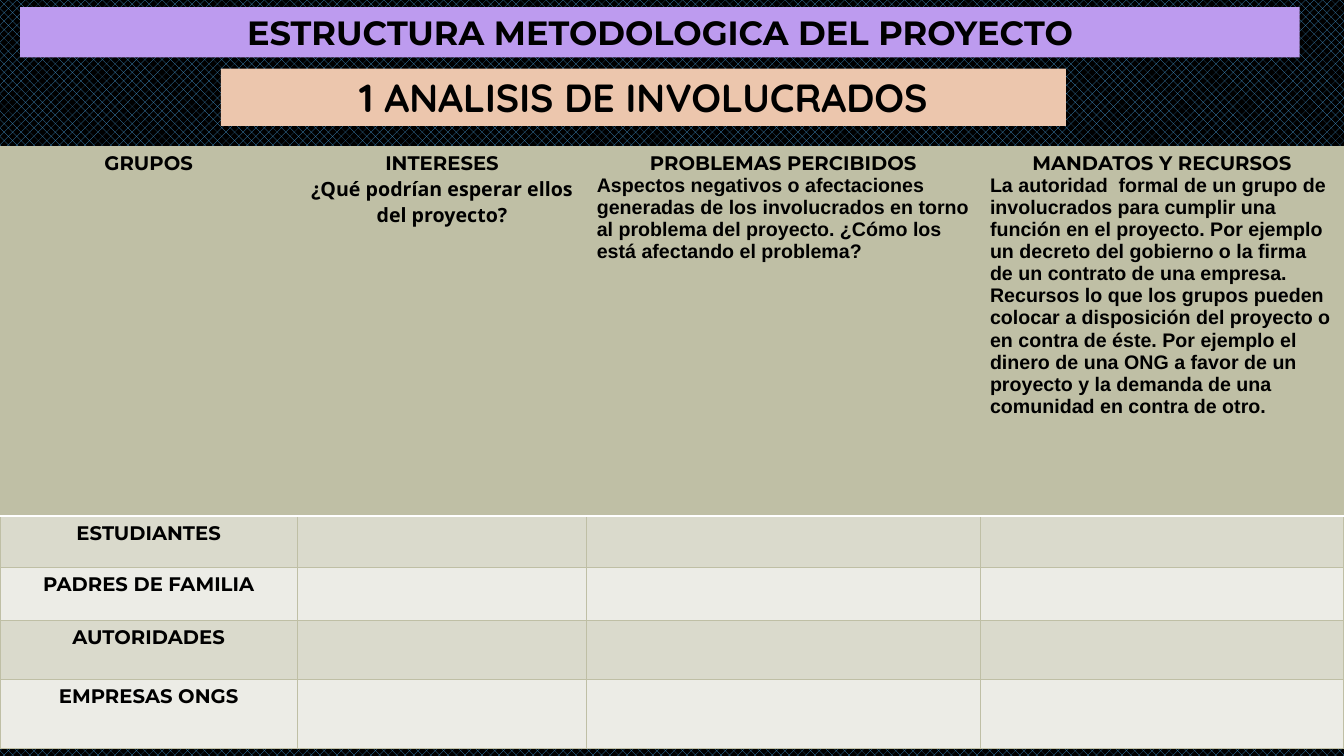
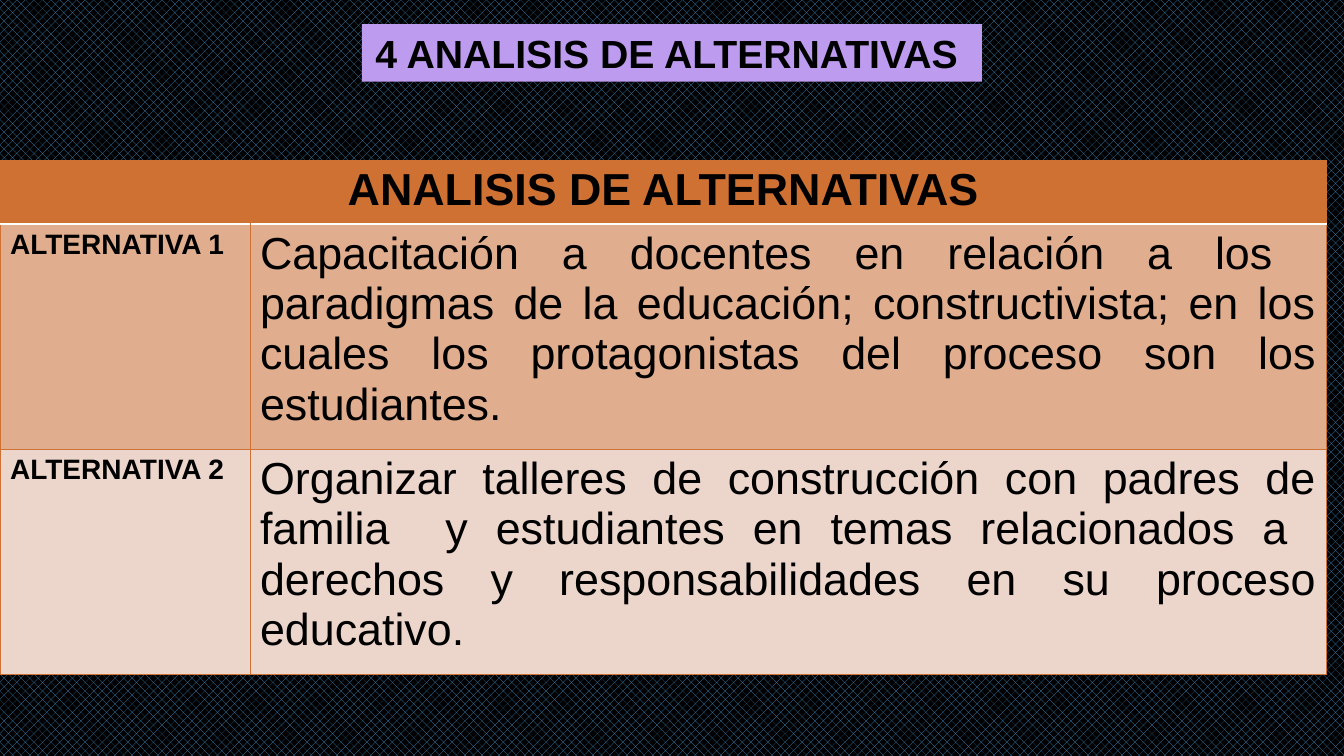
from dataclasses import dataclass

from lxml.etree import SubElement
from pptx import Presentation
from pptx.dml.color import RGBColor
from pptx.enum.dml import MSO_PATTERN
from pptx.enum.shapes import MSO_SHAPE
from pptx.enum.text import PP_ALIGN
from pptx.oxml.ns import qn
from pptx.util import Inches, Pt


@dataclass(frozen=True)
class Theme:
    ink: str = "000000"
    weave: str = "4597CF"
    rule: str = "FFFFFF"
    lilac: str = "BD9BEF"
    peach: str = "ECC6AD"
    # heading, odd rows, even rows
    olive: tuple = ("BFBFA5", "DADACC", "ECECE6")
    orange: tuple = ("CF7133", "E0AD8E", "ECD5CB")
    heading: str = "Montserrat"
    subtitle: str = "Quicksand"
    question: str = "Open Sans"
    body: str = "Arial"
    small: int = 14
    label: int = 20
    title: int = 24
    section: int = 28
    large: int = 32
    thin: float = 0.75
    thick: float = 1.5


theme = Theme()
rgb = RGBColor.from_string
LEFT, CENTER, JUSTIFY = PP_ALIGN.LEFT, PP_ALIGN.CENTER, PP_ALIGN.JUSTIFY


def write(frame, paragraphs):
    """Each paragraph is (text, font name, size, alignment, bold)."""
    for index, (text, font_name, size, alignment, bold) in enumerate(paragraphs):
        paragraph = frame.add_paragraph() if index else frame.paragraphs[0]
        paragraph.alignment = alignment
        run = paragraph.add_run()
        run.text = text
        run.font.name = font_name
        run.font.size = Pt(size)
        run.font.bold = bold
        run.font.color.rgb = rgb(theme.ink)


def draw_border(cell, side, color, width):
    """Side is L, R, T or B; call in that order and before filling the cell."""
    properties = cell._tc.get_or_add_tcPr()
    line = SubElement(properties, qn(f"a:ln{side}"), w=str(Pt(width)))
    SubElement(SubElement(line, qn("a:solidFill")), qn("a:srgbClr"), val=color)


group_heading = (theme.heading, theme.small, CENTER, True)
group_detail = (theme.body, theme.small, LEFT, True)
alternative_label = (theme.body, theme.label, LEFT, True)
alternative_text = (theme.body, theme.large, JUSTIFY, False)

stakeholder_rows = [
    [
        [("GRUPOS", *group_heading)],
        [
            ("INTERESES", *group_heading),
            ("¿Qué podrían esperar ellos del proyecto?",
             theme.question, theme.small, CENTER, True),
        ],
        [
            ("PROBLEMAS PERCIBIDOS", *group_heading),
            ("Aspectos negativos o afectaciones generadas de los involucrados en "
             "torno al problema del proyecto. ¿Cómo los está afectando el problema?",
             *group_detail),
        ],
        [
            ("MANDATOS Y RECURSOS", *group_heading),
            ("La autoridad  formal de un grupo de involucrados para cumplir una "
             "función en el proyecto. Por ejemplo un decreto del gobierno o la firma "
             "de un contrato de una empresa.  Recursos lo que los grupos pueden "
             "colocar a disposición del proyecto o en contra de éste. Por ejemplo el "
             "dinero de una ONG a favor de un proyecto y la demanda de una comunidad "
             "en contra de otro.", *group_detail),
        ],
    ],
]
for group in ("ESTUDIANTES", "PADRES DE FAMILIA", "AUTORIDADES", "EMPRESAS ONGS"):
    stakeholder_rows.append([[(group, *group_heading)]])

alternative_rows = [
    [[("ANALISIS DE ALTERNATIVAS", theme.body, theme.large, CENTER, True)]],
    [
        [("ALTERNATIVA 1", *alternative_label)],
        [("Capacitación a docentes en relación a los  paradigmas de la educación; "
          "constructivista; en los cuales los protagonistas del proceso son los "
          "estudiantes. ", *alternative_text)],
    ],
    [
        [("ALTERNATIVA 2", *alternative_label)],
        [("Organizar talleres de construcción con padres de familia  y estudiantes "
          "en temas relacionados a  derechos y responsabilidades en su proceso "
          "educativo. ", *alternative_text)],
    ],
]

# Places and sizes are percentages of the slide's width and height.
# Banners: text, font, size, fill, wrap, (left, top, width, height)
# Tables: top, column widths, row heights, palette, rows
pages = [
    (
        [
            ("ESTRUCTURA METODOLOGICA DEL PROYECTO", theme.heading, theme.title,
             theme.lilac, True, (1.5, 0.93, 95.2, 6.67)),
            ("1 ANALISIS DE INVOLUCRADOS", theme.subtitle, theme.section,
             theme.peach, True, (16.43, 9.07, 62.87, 7.6)),
        ],
        (19.33, (22.13, 21.53, 29.26, 27.08), (48.93, 6.8, 7.07, 7.73, 9.2),
         theme.olive, stakeholder_rows),
    ),
    (
        [
            ("4 ANALISIS DE ALTERNATIVAS ", theme.body, theme.section,
             theme.lilac, False, (26.93, 3.2, 46.14, 7.6)),
        ],
        (21.2, (18.6, 80.12), (8.4, 29.8, 29.8), theme.orange, alternative_rows),
    ),
]

deck = Presentation()
deck.slide_width, deck.slide_height = Inches(13.33), Inches(7.5)
across, down = deck.slide_width / 100, deck.slide_height / 100

for banners, (top, widths, heights, palette, rows) in pages:
    slide = deck.slides.add_slide(deck.slide_layouts[6])
    backdrop = slide.background.fill
    backdrop.patterned()
    backdrop.pattern = MSO_PATTERN.from_xml("pct40")
    backdrop.fore_color.rgb = rgb(theme.weave)
    backdrop.back_color.rgb = rgb(theme.ink)

    for text, font_name, size, fill, wrap, (x, y, width, height) in banners:
        banner = slide.shapes.add_shape(
            MSO_SHAPE.RECTANGLE, int(x * across), int(y * down),
            int(width * across), int(height * down))
        banner.shadow.inherit = False
        banner.fill.solid()
        banner.fill.fore_color.rgb = rgb(fill)
        banner.line.fill.background()
        banner.text_frame.word_wrap = wrap
        write(banner.text_frame, [(text, font_name, size, CENTER, True)])

    table = slide.shapes.add_table(
        len(heights), len(widths), 0, int(top * down),
        int(sum(widths) * across), int(sum(heights) * down)).table
    table.horz_banding = False
    for column, width in zip(table.columns, widths):
        column.width = int(width * across)
    for row, height in zip(table.rows, heights):
        row.height = int(height * down)

    heading_color, odd_color, even_color = palette
    for row_index, row in enumerate(table.rows):
        for cell in row.cells:
            for side in "LRTB":
                under_heading = (row_index, side) in ((0, "B"), (1, "T"))
                draw_border(cell, side,
                            theme.rule if under_heading else heading_color,
                            theme.thick if under_heading else theme.thin)
            cell.fill.solid()
            cell.fill.fore_color.rgb = rgb(
                heading_color if row_index == 0
                else odd_color if row_index % 2 else even_color)
        for cell, paragraphs in zip(row.cells, rows[row_index]):
            write(cell.text_frame, paragraphs)
    if len(rows[0]) == 1:
        table.cell(0, 0).merge(table.cell(0, len(widths) - 1))

deck.save("out.pptx")
